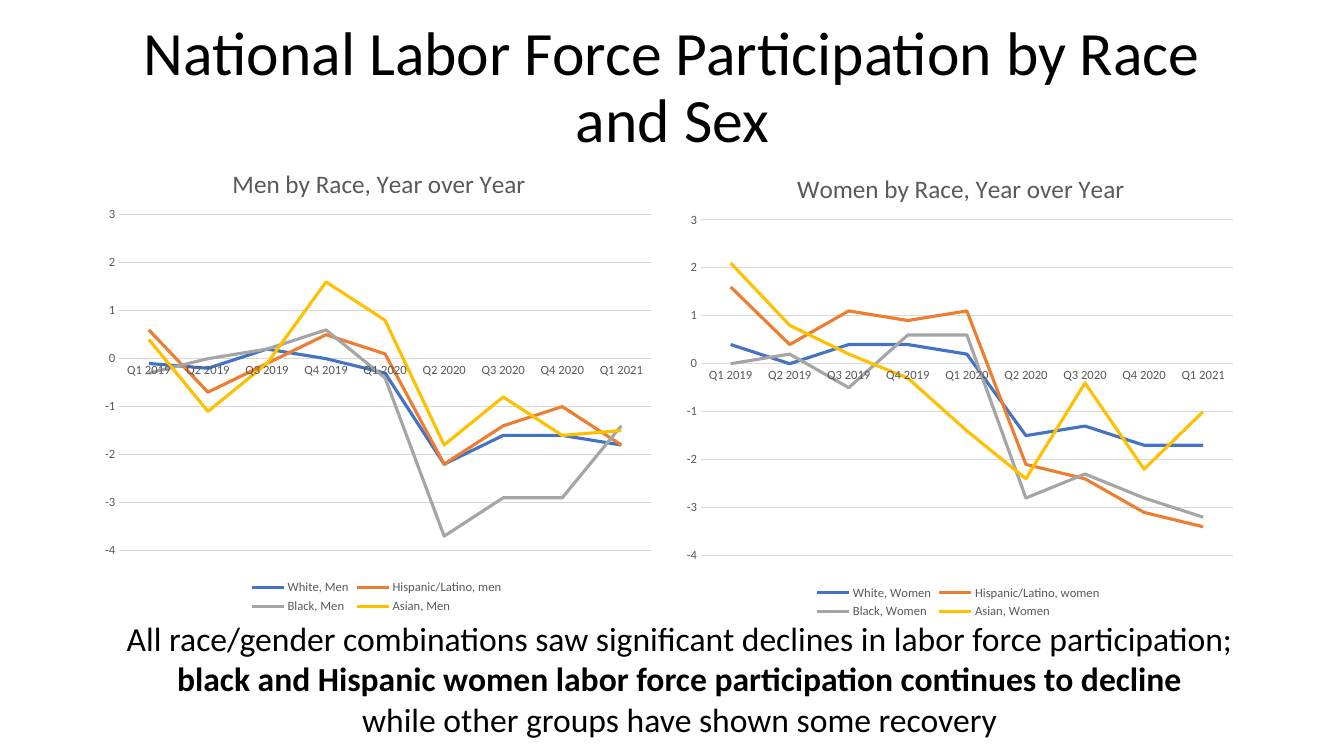
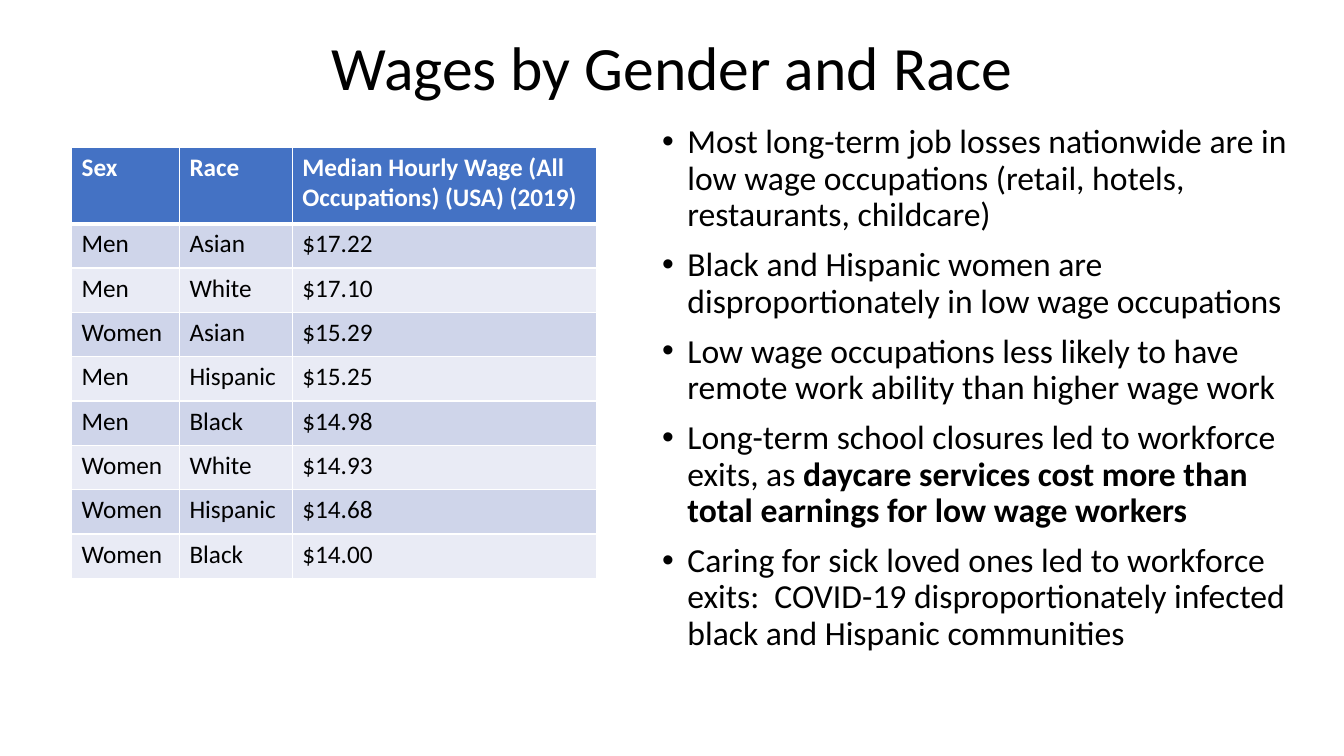
from dataclasses import dataclass

from lxml.etree import SubElement
from pptx import Presentation
from pptx.chart.data import CategoryChartData
from pptx.dml.color import RGBColor
from pptx.enum.chart import XL_CHART_TYPE, XL_LEGEND_POSITION, XL_MARKER_STYLE, XL_TICK_MARK
from pptx.enum.text import MSO_ANCHOR, PP_ALIGN
from pptx.oxml.ns import qn
from pptx.util import Inches, Pt


@dataclass(frozen=True)
class Theme:
    font: str = "Calibri"
    black: str = "000000"
    white: str = "FFFFFF"
    gray: str = "595959"
    rule: str = "D9D9D9"
    head: str = "4472C4"
    bands: tuple[str, ...] = ("CFD5EA", "E9EBF5")
    lines: tuple[str, ...] = ("4472C4", "ED7D31", "A5A5A5", "FFC000")
    title: int = 44
    body: int = 24
    cell: int = 18
    chart: int = 18
    label: int = 9


@dataclass(frozen=True)
class Box:
    left: float
    top: float
    width: float
    height: float

    def emu(self) -> tuple:
        return tuple(Inches(n) for n in (self.left, self.top, self.width, self.height))


@dataclass(frozen=True)
class Run:
    text: str
    bold: bool = False


@dataclass(frozen=True)
class Graph:
    title: str
    box: Box
    indent: float  # left edge of the title, as a share of the chart width
    series: dict[str, tuple[float, ...]]


THEME = Theme()
QUARTERS = [f"Q{q} {year}" for year in (2019, 2020) for q in range(1, 5)] + ["Q1 2021"]

GRAPHS = (
    Graph("Women by Race, Year over Year", Box(6.67, 1.42, 5.67, 4.76), 0.21, {
        "White, Women": (0.4, 0, 0.4, 0.4, 0.2, -1.5, -1.3, -1.7, -1.7),
        "Hispanic/Latino, women": (1.6, 0.4, 1.1, 0.9, 1.1, -2.1, -2.4, -3.1, -3.4),
        "Black, Women": (0, 0.2, -0.5, 0.6, 0.6, -2.8, -2.3, -2.8, -3.2),
        "Asian, Women": (2.1, 0.8, 0.2, -0.3, -1.4, -2.4, -0.4, -2.2, -1),
    }),
    Graph("Men by Race, Year over Year", Box(0.9, 1.37, 5.67, 4.76), 0.24, {
        "White, Men": (-0.1, -0.2, 0.2, 0, -0.3, -2.2, -1.6, -1.6, -1.8),
        "Hispanic/Latino, men": (0.6, -0.7, -0.1, 0.5, 0.1, -2.2, -1.4, -1, -1.8),
        "Black, Men": (-0.3, 0, 0.2, 0.6, -0.4, -3.7, -2.9, -2.9, -1.4),
        "Asian, Men": (0.4, -1.1, -0.1, 1.6, 0.8, -1.8, -0.8, -1.6, -1.5),
    }),
)

WAGES = (
    ("Sex", "Race", "Median Hourly Wage (All Occupations) (USA) (2019)"),
    ("Men", "Asian", "$17.22"),
    ("Men", "White", "$17.10"),
    ("Women", "Asian", "$15.29"),
    ("Men", "Hispanic", "$15.25"),
    ("Men", "Black", "$14.98"),
    ("Women", "White", "$14.93"),
    ("Women", "Hispanic", "$14.68"),
    ("Women", "Black", "$14.00"),
)

POINTS = (
    (Run("Most long-term job losses nationwide are in low wage occupations "
         "(retail, hotels, restaurants, childcare)"),),
    (Run("Black and Hispanic women are disproportionately in low wage occupations"),),
    (Run("Low wage occupations less likely to have remote work ability "
         "than higher wage work"),),
    (Run("Long-term school closures led to workforce exits, as "),
     Run("daycare services cost more than total earnings for low wage workers", True)),
    (Run("Caring for sick loved ones led to workforce exits:  COVID-19 "
         "disproportionately infected black and Hispanic communities"),),
)


def style(font, size: int, color: str, bold: bool = False) -> None:
    font.name = THEME.font
    font.size = Pt(size)
    font.bold = bold
    font.color.rgb = RGBColor.from_string(color)


def add_frame(slide, box: Box):
    frame = slide.shapes.add_textbox(*box.emu()).text_frame
    frame.word_wrap = True
    return frame


def add_runs(para, runs: tuple[Run, ...]) -> None:
    for item in runs:
        run = para.add_run()
        run.text = item.text
        if item.bold:
            run.font.bold = True


def add_title(slide, text: str, box: Box) -> None:
    frame = add_frame(slide, box)
    frame.vertical_anchor = MSO_ANCHOR.MIDDLE
    para = frame.paragraphs[0]
    para.text = text
    para.alignment = PP_ALIGN.CENTER
    para.line_spacing = 0.9
    style(para.font, THEME.title, THEME.black)


def add_note(slide) -> None:
    frame = add_frame(slide, Box(0.45, 6.08, 12.58, 1.31))
    first, last = frame.paragraphs[0], frame.add_paragraph()
    add_runs(first, (Run("All race/gender combinations saw significant declines "
                         "in labor force participation;"),))
    first.add_line_break()
    add_runs(first, (Run("black and Hispanic women labor force participation "
                         "continues to decline", True),))
    add_runs(last, (Run("while other groups have shown some recovery"),))
    for para in frame.paragraphs:
        para.alignment = PP_ALIGN.CENTER
        style(para.font, THEME.body, THEME.black)


def add_points(slide) -> None:
    frame = add_frame(slide, Box(6.47, 1.19, 6.46, 5.67))
    for i, runs in enumerate(POINTS):
        para = frame.add_paragraph() if i else frame.paragraphs[0]
        add_runs(para, runs)
        para.line_spacing = 0.9
        para.space_before = Pt(10 if i else 0)
        props = para._p.get_or_add_pPr()
        props.set("marL", str(Inches(0.25)))
        props.set("indent", str(-Inches(0.25)))
        SubElement(props, qn("a:buFont"), typeface="Arial")
        SubElement(props, qn("a:buChar"), char="•")
        style(para.font, THEME.body, THEME.black)


def place(parent, **spots: float) -> None:
    """Set a manual layout on a chart part, in shares of the chart size."""
    layout = parent.find(qn("c:layout"))
    if layout is None:
        layout = SubElement(parent, qn("c:layout"))
        parent.insert(0, layout)
    manual = SubElement(layout, qn("c:manualLayout"))
    if "w" in spots:
        SubElement(manual, qn("c:layoutTarget"), val="inner")
    for key in ("x", "y"):
        SubElement(manual, qn(f"c:{key}Mode"), val="edge")
    for key, value in spots.items():
        SubElement(manual, qn(f"c:{key}"), val=str(value))


def add_graph(slide, graph: Graph) -> None:
    data = CategoryChartData()
    data.categories = QUARTERS
    for name, values in graph.series.items():
        data.add_series(name, values)
    chart = slide.shapes.add_chart(XL_CHART_TYPE.LINE, *graph.box.emu(), data).chart
    style(chart.font, THEME.label, THEME.gray)

    chart.has_title = True
    head = chart.chart_title.text_frame.paragraphs[0]
    head.text = graph.title
    style(head.font, THEME.chart, THEME.gray)
    style(head.runs[0].font, THEME.chart, THEME.gray)
    place(chart.chart_title._element, x=graph.indent, y=0.05)
    place(chart._chartSpace.chart.plotArea, x=0.05, y=0.16, w=0.93, h=0.7)

    chart.has_legend = True
    chart.legend.position = XL_LEGEND_POSITION.BOTTOM
    chart.legend.include_in_layout = False
    style(chart.legend.font, THEME.label, THEME.gray)

    rule = RGBColor.from_string(THEME.rule)
    scale = chart.value_axis
    scale.minimum_scale, scale.maximum_scale, scale.major_unit = -4, 3, 1
    scale.format.line.fill.background()
    for axis in (chart.category_axis, scale):
        axis.major_tick_mark = axis.minor_tick_mark = XL_TICK_MARK.NONE
        style(axis.tick_labels.font, THEME.label, THEME.gray)
    for line in (chart.category_axis.format.line, scale.major_gridlines.format.line):
        line.color.rgb = rule
        line.width = Pt(0.75)

    chart.plots[0].vary_by_categories = False
    for series, color in zip(chart.plots[0].series, THEME.lines):
        series.smooth = False
        series.marker.style = XL_MARKER_STYLE.NONE
        series.format.line.color.rgb = RGBColor.from_string(color)
        series.format.line.width = Pt(2.25)


def add_edges(cell, top: int, bottom: int) -> None:
    """Draw white cell borders; top and bottom widths are in points."""
    props = cell._tc.get_or_add_tcPr()
    for i, (side, width) in enumerate((("L", 1), ("R", 1), ("T", top), ("B", bottom))):
        edge = SubElement(props, qn(f"a:ln{side}"), w=str(Pt(width)))
        fill = SubElement(edge, qn("a:solidFill"))
        SubElement(fill, qn("a:srgbClr"), val=THEME.white)
        props.insert(i, edge)


def add_wages(slide) -> None:
    box = Box(0.71, 1.46, 5.21, 4.28)
    table = slide.shapes.add_table(len(WAGES), len(WAGES[0]), *box.emu()).table
    for col, width in zip(table.columns, (1.07, 1.12, 3.02)):
        col.width = Inches(width)
    for r, texts in enumerate(WAGES):
        table.rows[r].height = Inches(0.44 if r else 0.76)
        color = THEME.bands[(r - 1) % 2] if r else THEME.head
        for c, text in enumerate(texts):
            cell = table.cell(r, c)
            cell.text = text
            cell.fill.solid()
            cell.fill.fore_color.rgb = RGBColor.from_string(color)
            style(cell.text_frame.paragraphs[0].font, THEME.cell,
                  THEME.black if r else THEME.white, bold=not r)
            add_edges(cell, top=3 if r == 1 else 1, bottom=1 if r else 3)


def main() -> None:
    deck = Presentation()
    deck.slide_width, deck.slide_height = Inches(13.33), Inches(7.5)
    blank = deck.slide_layouts[6]

    labor = deck.slides.add_slide(blank)
    add_title(labor, "National Labor Force Participation by Race and Sex",
              Box(0.92, 0.16, 11.5, 1.45))
    add_note(labor)
    for graph in GRAPHS:
        add_graph(labor, graph)

    wages = deck.slides.add_slide(blank)
    add_title(wages, "Wages by Gender and Race", Box(0.92, 0.2, 11.5, 0.99))
    add_wages(wages)
    add_points(wages)

    deck.save("out.pptx")


if __name__ == "__main__":
    main()
